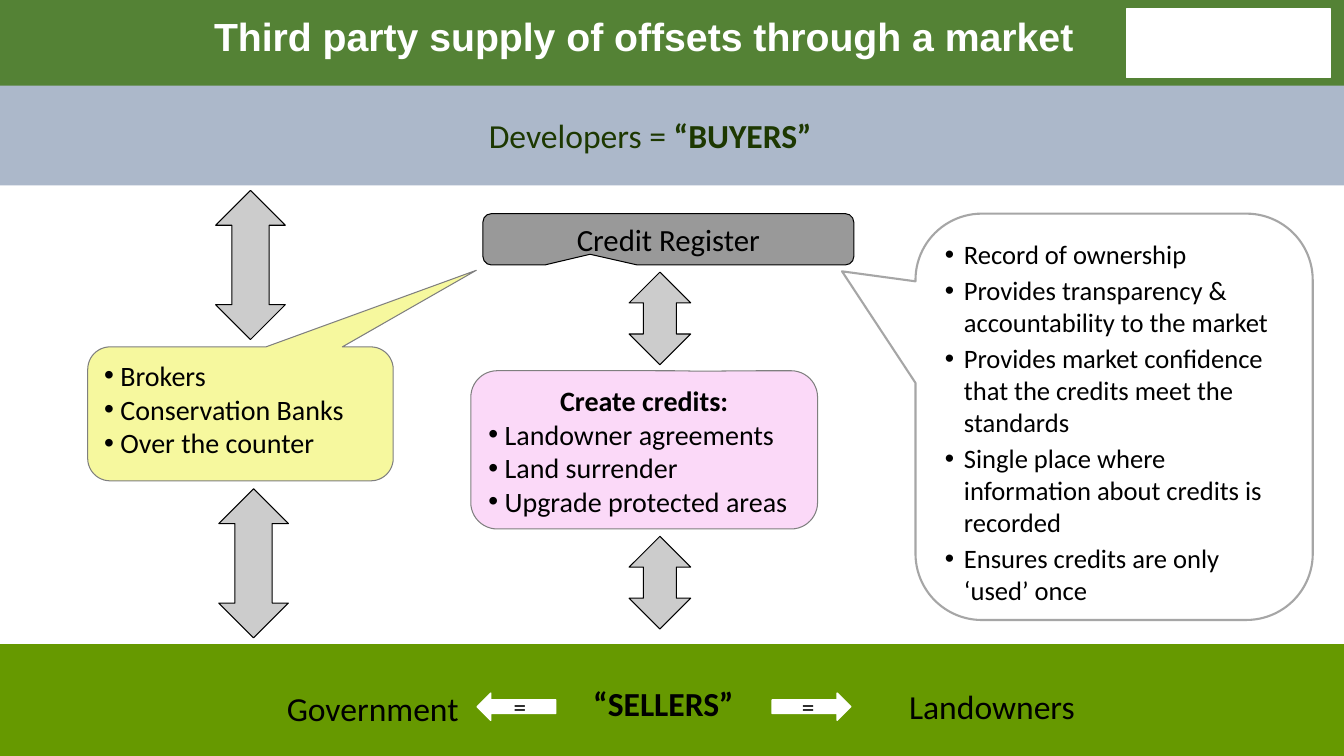
from dataclasses import dataclass

from lxml import etree
from pptx import Presentation
from pptx import util as u
from pptx.dml.color import RGBColor
from pptx.enum import shapes, text
from pptx.oxml.ns import qn

SHAPE = shapes.MSO_SHAPE
ALIGN = text.PP_ALIGN


@dataclass(frozen=True)
class Theme:
    body: str = "Calibri"
    heading: str = "Arial"
    white: str = "FFFFFF"
    black: str = "000000"
    header: str = "548235"
    buyers: str = "ACB8CA"
    buyers_text: str = "1D3801"
    sellers: str = "669900"
    brokers: str = "F6F89E"
    register: str = "999999"
    credits: str = "FBD9F8"
    arrow: str = "CCCCCC"
    edge: str = "7F7F7F"
    record_edge: str = "A6A6A6"
    title_size: int = 28
    band_size: int = 24
    register_size: int = 22
    list_size: int = 20
    record_size: int = 19
    equals_size: int = 18


THEME = Theme()


@dataclass(frozen=True)
class Box:
    left: float
    top: float
    width: float
    height: float

    def inner(self, left, top, width, height):
        return Box(self.left + self.width * left / 100,
                   self.top + self.height * top / 100,
                   self.width * width / 100,
                   self.height * height / 100)

    def emu(self):
        return [u.Inches(side) for side in (self.left, self.top, self.width, self.height)]


def add_shape(page, kind, box, fill=None, line=None, weight=0.75, adjustments=()):
    shape = page.shapes.add_shape(kind, *box.emu())
    shape.shadow.inherit = False
    for index, value in enumerate(adjustments):
        shape.adjustments[index] = value
    if fill:
        shape.fill.solid()
        shape.fill.fore_color.rgb = RGBColor.from_string(fill)
    else:
        shape.fill.background()
    if line:
        shape.line.color.rgb = RGBColor.from_string(line)
        shape.line.width = u.Pt(weight)
    else:
        shape.line.fill.background()
    return shape


def add_bullet(para, indent):
    props = para._p.get_or_add_pPr()
    props.set("marL", str(u.Inches(indent)))
    props.set("indent", str(-u.Inches(indent)))
    colour = etree.SubElement(props, qn("a:buClr"))
    etree.SubElement(colour, qn("a:srgbClr"), val=THEME.black)
    etree.SubElement(props, qn("a:buFont"), typeface="Arial")
    etree.SubElement(props, qn("a:buChar"), char="•")


def style(para, size, color=THEME.black, bold=False, font=THEME.body, align=ALIGN.LEFT):
    para.alignment = align
    para.font.size = u.Pt(size)
    para.font.name = font
    para.font.bold = bold
    para.font.color.rgb = RGBColor.from_string(color)


def write(shape, lines, size, bullet=None, gap=0, heading=None, **look):
    frame = shape.text_frame
    frame.word_wrap = True
    frame.vertical_anchor = text.MSO_ANCHOR.TOP
    rows = ([heading] if heading else []) + lines
    for index, row in enumerate(rows):
        para = frame.add_paragraph() if index else frame.paragraphs[0]
        para.text = row
        if heading and index == 0:
            style(para, size, bold=True, align=ALIGN.CENTER)
            continue
        if index and gap:
            para.space_before = u.Pt(gap)
        if bullet:
            add_bullet(para, bullet)
        style(para, size, **look)
    return frame


def add_label(page, box, wording, size, **look):
    return write(page.shapes.add_textbox(*box.emu()), [wording], size, **look)


def add_callout(page, box, fill, line, tip, weight=0.75):
    return add_shape(page, SHAPE.ROUNDED_RECTANGULAR_CALLOUT, box, fill, line, weight,
                     (*tip, 0.167))


def draw_header(page, box):
    add_shape(page, SHAPE.RECTANGLE, box, THEME.header)
    add_shape(page, SHAPE.RECTANGLE, box.inner(83.8, 10.3, 15.2, 78), THEME.white, THEME.white, 1)
    title = add_label(page, box.inner(0.5, 15, 94.8, 102),
                      "Third party supply of offsets through a market", THEME.title_size,
                      color=THEME.white, bold=True, font=THEME.heading, align=ALIGN.CENTER)
    title.paragraphs[0].line_spacing = 0.9


def draw_buyers(page, box):
    add_shape(page, SHAPE.RECTANGLE, box, THEME.buyers)
    label = add_label(page, box.inner(35.63, 24.2, 27.9, 59.6), "Developers = ",
                      THEME.band_size, color=THEME.buyers_text)
    span = label.paragraphs[0].add_run()
    span.text = "“BUYERS”"
    span.font.bold = True


def draw_market(page, box):
    brokers = add_callout(page, box.inner(6.53, 35.2, 22.73, 29.2),
                          THEME.brokers, THEME.edge, (0.772, -1.072))
    write(brokers, ["Brokers", "Conservation Banks", "Over the counter"],
          THEME.list_size, bullet=0.16)

    register = add_callout(page, box.inner(35.93, 6.15, 27.6, 11.2),
                           THEME.register, THEME.black, (-0.211, 0.292))
    write(register, ["Credit Register"], THEME.register_size, align=ALIGN.CENTER)

    credit_types = add_callout(page, box.inner(35.03, 40.4, 25.8, 34.5),
                               THEME.credits, THEME.edge, (0.161, -0.497))
    write(credit_types, ["Landowner agreements", "Land surrender", "Upgrade protected areas"],
          THEME.list_size, bullet=0.16, heading="Create credits:")

    records = add_callout(page, box.inner(68.12, 6.15, 29.56, 88.6),
                          None, THEME.record_edge, (-0.685, -0.358), 1.5)
    write(records, ["Record of ownership",
                    "Provides transparency & accountability to the market",
                    "Provides market confidence that the credits meet the standards",
                    "Single place where information about credits is recorded",
                    "Ensures credits are only ‘used’ once"],
          THEME.record_size, bullet=0.19, gap=3)

    for place in ((16.05, 1.1, 5.18, 32.5), (16.28, 66.15, 5.18, 32.5),
                  (46.81, 18.9, 4.58, 20.2), (46.81, 76.5, 4.58, 20.2)):
        add_shape(page, SHAPE.UP_DOWN_ARROW, box.inner(*place), THEME.arrow, THEME.black,
                  adjustments=(0.5, 0.534))


def draw_sellers(page, box):
    add_shape(page, SHAPE.RECTANGLE, box, THEME.sellers)
    for wording, place, bold in (("Government", (20.6, 35.1, 22.9, 46), False),
                                 ("“SELLERS”", (43.4, 30.6, 12.7, 45), True),
                                 ("Landowners", (66.9, 33.3, 21.2, 46), False)):
        add_label(page, box.inner(*place), wording, THEME.band_size, bold=bold)
    for kind, left in ((SHAPE.LEFT_ARROW, 35.5), (SHAPE.RIGHT_ARROW, 57.45)):
        arrow = add_shape(page, kind, box.inner(left, 43.8, 5.85, 24.3),
                          THEME.white, THEME.white, 1)
        frame = write(arrow, ["="], THEME.equals_size, align=ALIGN.CENTER)
        frame.vertical_anchor = text.MSO_ANCHOR.MIDDLE


def main():
    deck = Presentation()
    slide = Box(0, 0, 13.33, 7.5)
    deck.slide_width = u.Inches(slide.width)
    deck.slide_height = u.Inches(slide.height)
    page = deck.slides.add_slide(deck.slide_layouts[6])
    draw_header(page, slide.inner(0, 0, 100, 11.6))
    draw_buyers(page, slide.inner(0, 11.33, 100, 13.2))
    draw_sellers(page, slide.inner(0, 85.2, 100, 14.8))
    draw_market(page, slide.inner(0, 24.53, 100, 60.67))
    deck.save("out.pptx")


if __name__ == "__main__":
    main()
